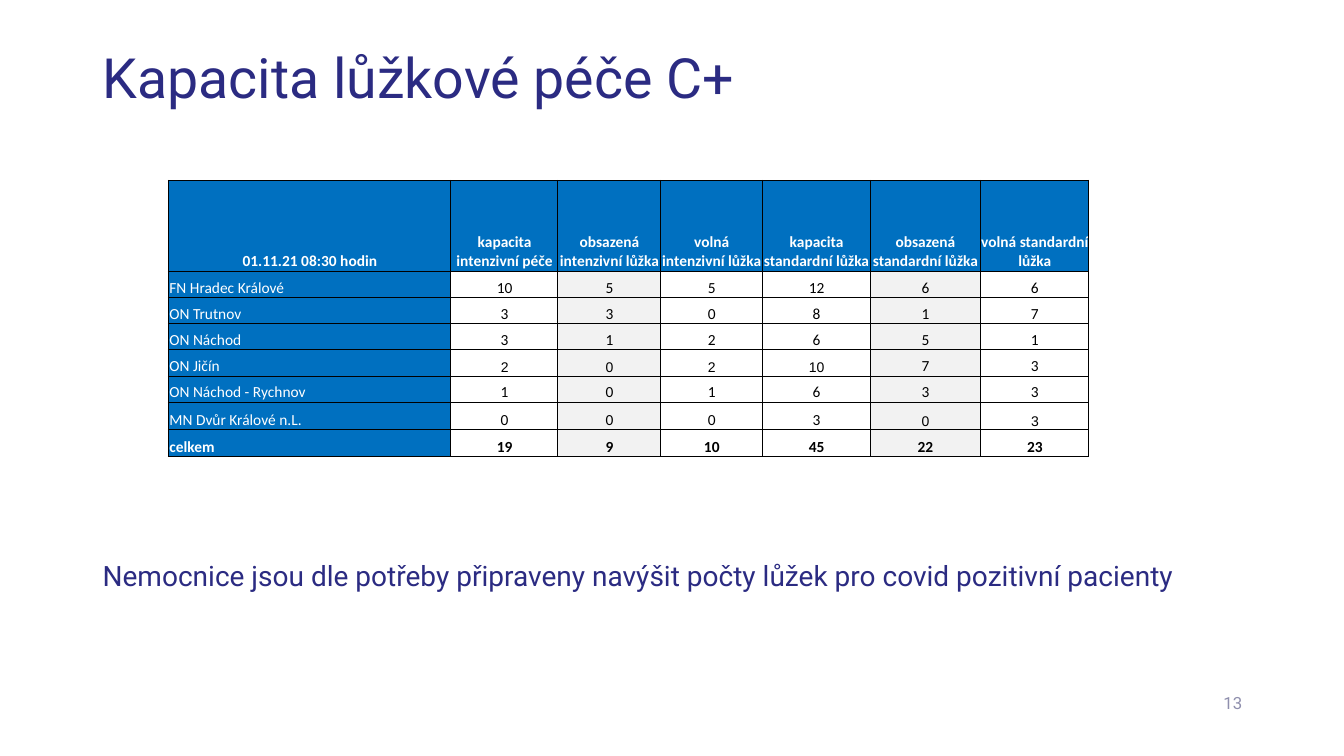
from lxml.etree import SubElement
from pptx import Presentation
from pptx.dml.color import RGBColor
from pptx.enum.text import MSO_ANCHOR, PP_ALIGN
from pptx.oxml.ns import qn
from pptx.util import Inches, Pt

COLORS = {
    "navy": "2B2B82",
    "muted": "8F8FAD",
    "blue": "0070C0",
    "gray": "F2F2F2",
    "white": "FFFFFF",
    "black": "000000",
}
COLUMN_WIDTHS = [2.8, 1.06, 1.02, 1.01, 1.07, 1.09, 1.08]
ROW_HEIGHTS = [0.9] + [0.26] * 5 + [0.27] * 2
OCCUPIED_COLUMNS = (2, 5)
ARIAL_CELLS = {(4, 1), (4, 2), (4, 3), (4, 4), (6, 5), (6, 6)}
BEDS = [
    ["01.11.21 08:30 hodin", "kapacita intenzivní péče", "obsazená intenzivní lůžka",
     "volná intenzivní lůžka", "kapacita standardní lůžka",
     "obsazená standardní lůžka", "volná standardní lůžka"],
    ["FN Hradec Králové", 10, 5, 5, 12, 6, 6],
    ["ON Trutnov", 3, 3, 0, 8, 1, 7],
    ["ON Náchod", 3, 1, 2, 6, 5, 1],
    ["ON Jičín", 2, 0, 2, 10, 7, 3],
    ["ON Náchod - Rychnov", 1, 0, 1, 6, 3, 3],
    ["MN Dvůr Králové n.L.", 0, 0, 0, 3, 0, 3],
    ["celkem", 19, 9, 10, 45, 22, 23],
]


def rgb(name):
    return RGBColor.from_string(COLORS[name])


def write(tf, text, *, size, font="Roboto", color="navy", bold=False,
          align=PP_ALIGN.LEFT, spacing=None):
    tf.word_wrap = True
    p = tf.paragraphs[0]
    p.alignment = align
    if spacing:
        p.line_spacing = spacing
    r = p.add_run()
    r.text = text
    r.font.size = Pt(size)
    r.font.name = font
    r.font.bold = bold
    r.font.color.rgb = rgb(color)


def add_label(slide, box, text, anchor, **fmt):
    tf = slide.shapes.add_textbox(*map(Inches, box)).text_frame
    tf.vertical_anchor = anchor
    write(tf, text, **fmt)


def set_borders(cell, widths):
    """Draw black cell borders from a mapping of side to width in points."""
    tc_pr = cell._tc.get_or_add_tcPr()
    for side, width in widths.items():
        ln = SubElement(tc_pr, qn(f"a:ln{side}"), w=str(Pt(width)))
        fill = SubElement(ln, qn("a:solidFill"))
        SubElement(fill, qn("a:srgbClr"), val=COLORS["black"])


def format_cell(cell, row, col, value):
    last = len(BEDS) - 1
    header, label = row == 0, col == 0
    set_borders(cell, {
        "L": 1 if label else 0.5,
        "R": 0.5,
        "T": 1 if row in (0, last) else 0.5,
        "B": 1 if row >= last - 1 else 0.5,
    })
    if header or label:
        fill = "blue"
    else:
        fill = "gray" if col in OCCUPIED_COLUMNS else "white"
    cell.fill.solid()
    cell.fill.fore_color.rgb = rgb(fill)
    cell.margin_left = cell.margin_top = Inches(0.01)
    cell.margin_right = cell.margin_bottom = 0
    cell.vertical_anchor = MSO_ANCHOR.BOTTOM
    arial = (row, col) in ARIAL_CELLS
    write(cell.text_frame, str(value),
          size=10 if arial else 11,
          font="Arial" if arial else "Calibri",
          color="white" if fill == "blue" else "black",
          bold=row in (0, last),
          align=PP_ALIGN.LEFT if label and not header else PP_ALIGN.CENTER)


def add_bed_table(slide, left, top):
    box = (left, top, sum(COLUMN_WIDTHS), sum(ROW_HEIGHTS))
    table = slide.shapes.add_table(len(BEDS), len(COLUMN_WIDTHS),
                                   *map(Inches, box)).table
    table.first_row = table.horz_banding = False
    for column, width in zip(table.columns, COLUMN_WIDTHS):
        column.width = Inches(width)
    for row, (height, values) in enumerate(zip(ROW_HEIGHTS, BEDS)):
        table.rows[row].height = Inches(height)
        for col, value in enumerate(values):
            format_cell(table.cell(row, col), row, col, value)


def main():
    prs = Presentation()
    prs.slide_width, prs.slide_height = Inches(13.33), Inches(7.5)
    s = prs.slides.add_slide(prs.slide_layouts[6])
    add_label(s, (0.92, 0.41, 11.5, 0.74), "Kapacita lůžkové péče C+",
              MSO_ANCHOR.BOTTOM, size=39.6, spacing=0.9)
    add_label(s, (11.28, 6.77, 1.14, 0.4), "13", MSO_ANCHOR.MIDDLE,
              size=12, color="muted", align=PP_ALIGN.RIGHT)
    add_label(s, (0.92, 5.5, 11.5, 0.45),
              "Nemocnice jsou dle potřeby připraveny navýšit počty lůžek "
              "pro covid pozitivní pacienty",
              MSO_ANCHOR.MIDDLE, size=20, spacing=0.9)
    add_bed_table(s, 1.67, 1.79)
    prs.save("out.pptx")


if __name__ == "__main__":
    main()
